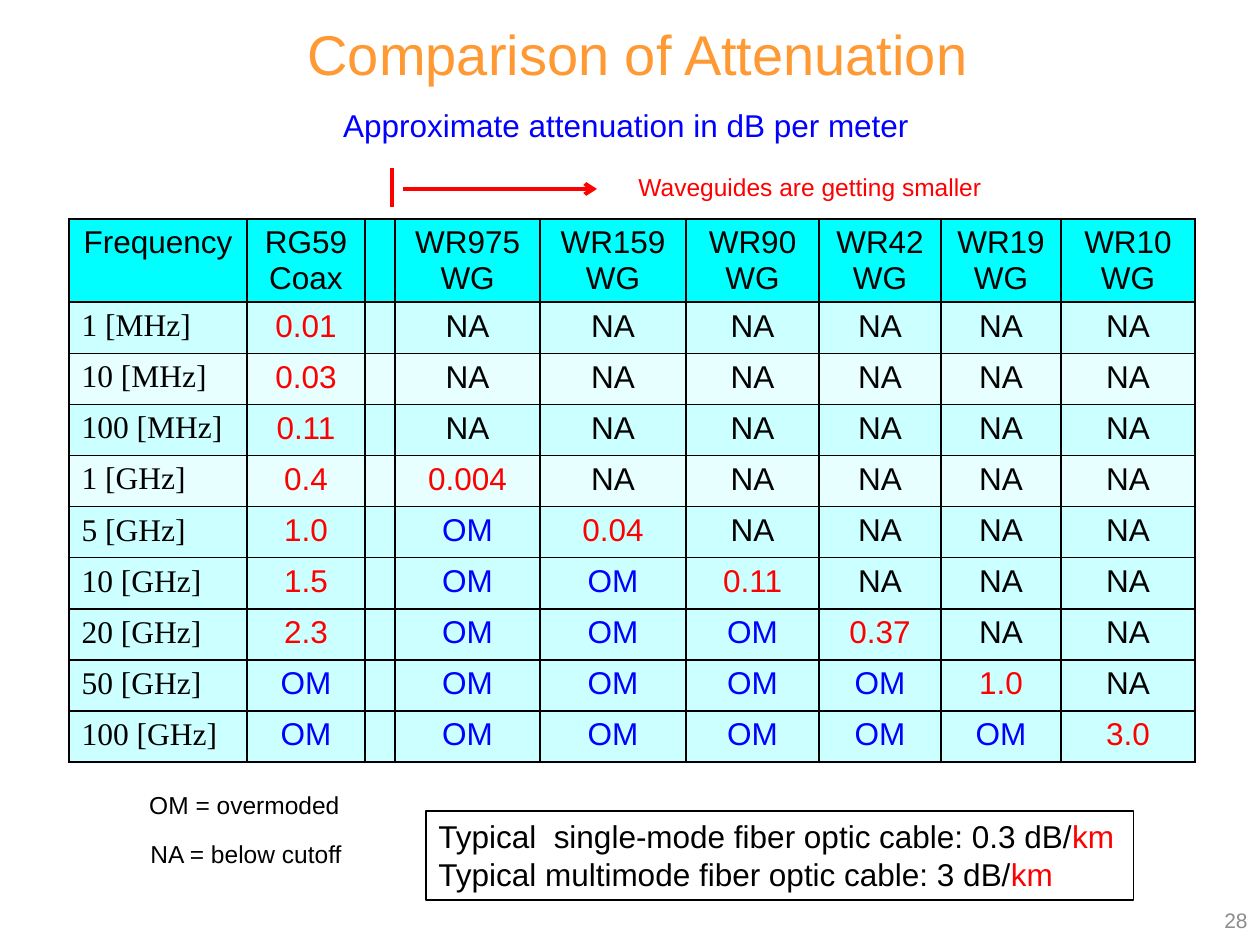
from lxml.etree import SubElement
from pptx import Presentation
from pptx.dml.color import RGBColor
from pptx.enum.shapes import MSO_CONNECTOR, MSO_SHAPE
from pptx.enum.text import MSO_ANCHOR, PP_ALIGN
from pptx.oxml.ns import qn
from pptx.util import Pt

PX = 914400 // 126
BLACK = RGBColor(0, 0, 0)
RED = RGBColor(255, 0, 0)
BLUE = RGBColor(0, 0, 255)
ORANGE = RGBColor(255, 153, 51)
GRAY = RGBColor(140, 140, 140)
CYAN = RGBColor(0, 255, 255)
PALE = RGBColor(204, 255, 255)
LIGHT = RGBColor(231, 255, 255)
LEFT, MID, RIGHT = PP_ALIGN.LEFT, PP_ALIGN.CENTER, PP_ALIGN.RIGHT

HEAD = ["Frequency", "RG59 Coax", "", "WR975\nWG", "WR159\nWG",
        "WR90\nWG", "WR42\nWG", "WR19\nWG", "WR10\nWG"]
ROWS = [
    ("1 [MHz]", "0.01", "", "NA", "NA", "NA", "NA", "NA", "NA"),
    ("10 [MHz]", "0.03", "", "NA", "NA", "NA", "NA", "NA", "NA"),
    ("100 [MHz]", "0.11", "", "NA", "NA", "NA", "NA", "NA", "NA"),
    ("1 [GHz]", "0.4", "", "0.004", "NA", "NA", "NA", "NA", "NA"),
    ("5 [GHz]", "1.0", "", "OM", "0.04", "NA", "NA", "NA", "NA"),
    ("10 [GHz]", "1.5", "", "OM", "OM", "0.11", "NA", "NA", "NA"),
    ("20 [GHz]", "2.3", "", "OM", "OM", "OM", "0.37", "NA", "NA"),
    ("50 [GHz]", "OM", "", "OM", "OM", "OM", "OM", "1.0", "NA"),
    ("100 [GHz]", "OM", "", "OM", "OM", "OM", "OM", "OM", "3.0"),
]
FILLS = [CYAN, PALE, LIGHT, PALE, LIGHT] + [PALE] * 5
WIDTHS = [178, 118, 30, 145, 146, 133, 122, 120, 134]
HEIGHTS = [83] + [48] * 9
TONES = {"NA": BLACK, "OM": BLUE}

TEXTS = [
    ("Comparison of Attenuation", (293, 13, 690, 81), 32, ORANGE, MID),
    ("Approximate attenuation in dB per meter", (320, 100, 612, 50), 18, BLUE, MID),
    ("Waveguides are getting smaller", (626, 166, 370, 43), 14, RED, LEFT),
    ("OM = overmoded", (136, 784, 217, 43), 14, BLACK, MID),
    ("NA = below cutoff", (137, 833, 218, 43), 14, BLACK, MID),
]
NUMBER = ("28", (966, 895, 294, 50), 12, GRAY, RIGHT)
FIBER = [
    [("Typical  single-mode fiber optic cable: 0.3 dB/", BLACK), ("km", RED)],
    [("Typical multimode fiber optic cable: 3 dB/", BLACK), ("km", RED)],
]
LINES = [((403, 189, 597, 189), True), ((392, 168, 392, 207), False)]


def scale(box):
    return [n * PX for n in box]


def write(frame, paras, size, align, font="Arial"):
    for i, runs in enumerate(paras):
        para = frame.add_paragraph() if i else frame.paragraphs[0]
        para.alignment = align
        for text, color in runs:
            run = para.add_run()
            run.text = text
            run.font.size = Pt(size)
            run.font.name = font
            run.font.color.rgb = color


def label(slide, text, box, size, color, align):
    frame = slide.shapes.add_textbox(*scale(box)).text_frame
    frame.word_wrap = False
    write(frame, [[(text, color)]], size, align)
    return frame


def border(cell):
    props = cell._tc.get_or_add_tcPr()
    for side in ("a:lnL", "a:lnR", "a:lnT", "a:lnB"):
        line = SubElement(props, qn(side), w=str(Pt(1)))
        fill = SubElement(line, qn("a:solidFill"))
        SubElement(fill, qn("a:srgbClr"), val=str(BLACK))


def grid(slide):
    data = [HEAD] + ROWS
    box = scale((69, 219, sum(WIDTHS), sum(HEIGHTS)))
    table = slide.shapes.add_table(len(data), len(HEAD), *box).table
    table.first_row = table.horz_banding = False
    for col, wide in zip(table.columns, WIDTHS):
        col.width = wide * PX
    for row, high in zip(table.rows, HEIGHTS):
        row.height = high * PX
    for r, row in enumerate(data):
        for c, text in enumerate(row):
            cell = table.cell(r, c)
            border(cell)
            cell.fill.solid()
            cell.fill.fore_color.rgb = FILLS[r]
            if not text:
                continue
            name = r > 0 and c == 0
            color = BLACK if r == 0 or name else TONES.get(text, RED)
            write(cell.text_frame, [[(part, color)] for part in text.split("\n")],
                  18, LEFT if name else MID, "Times New Roman" if name else "Arial")


def note(slide):
    shape = slide.shapes.add_shape(MSO_SHAPE.RECTANGLE, *scale((426, 811, 708, 89)))
    shape.shadow.inherit = False
    shape.fill.background()
    shape.line.color.rgb = BLACK
    shape.line.width = Pt(0.75)
    frame = shape.text_frame
    frame.word_wrap = False
    frame.vertical_anchor = MSO_ANCHOR.TOP
    write(frame, FIBER, 18, LEFT)


def stroke(slide, ends, arrow):
    line = slide.shapes.add_connector(MSO_CONNECTOR.STRAIGHT, *scale(ends))
    line.line.color.rgb = RED
    line.line.width = Pt(2.25)
    props = line.element.spPr
    if arrow:
        SubElement(props.find(qn("a:ln")), qn("a:tailEnd"), type="arrow")
    SubElement(props, qn("a:effectLst"))


def main():
    deck = Presentation()
    deck.slide_width, deck.slide_height = scale((1260, 945))
    slide = deck.slides.add_slide(deck.slide_layouts[6])
    grid(slide)
    frame = label(slide, *NUMBER)
    frame.word_wrap = True
    frame.vertical_anchor = MSO_ANCHOR.MIDDLE
    for item in TEXTS:
        label(slide, *item)
    note(slide)
    for ends, arrow in LINES:
        stroke(slide, ends, arrow)
    deck.save("out.pptx")


if __name__ == "__main__":
    main()
